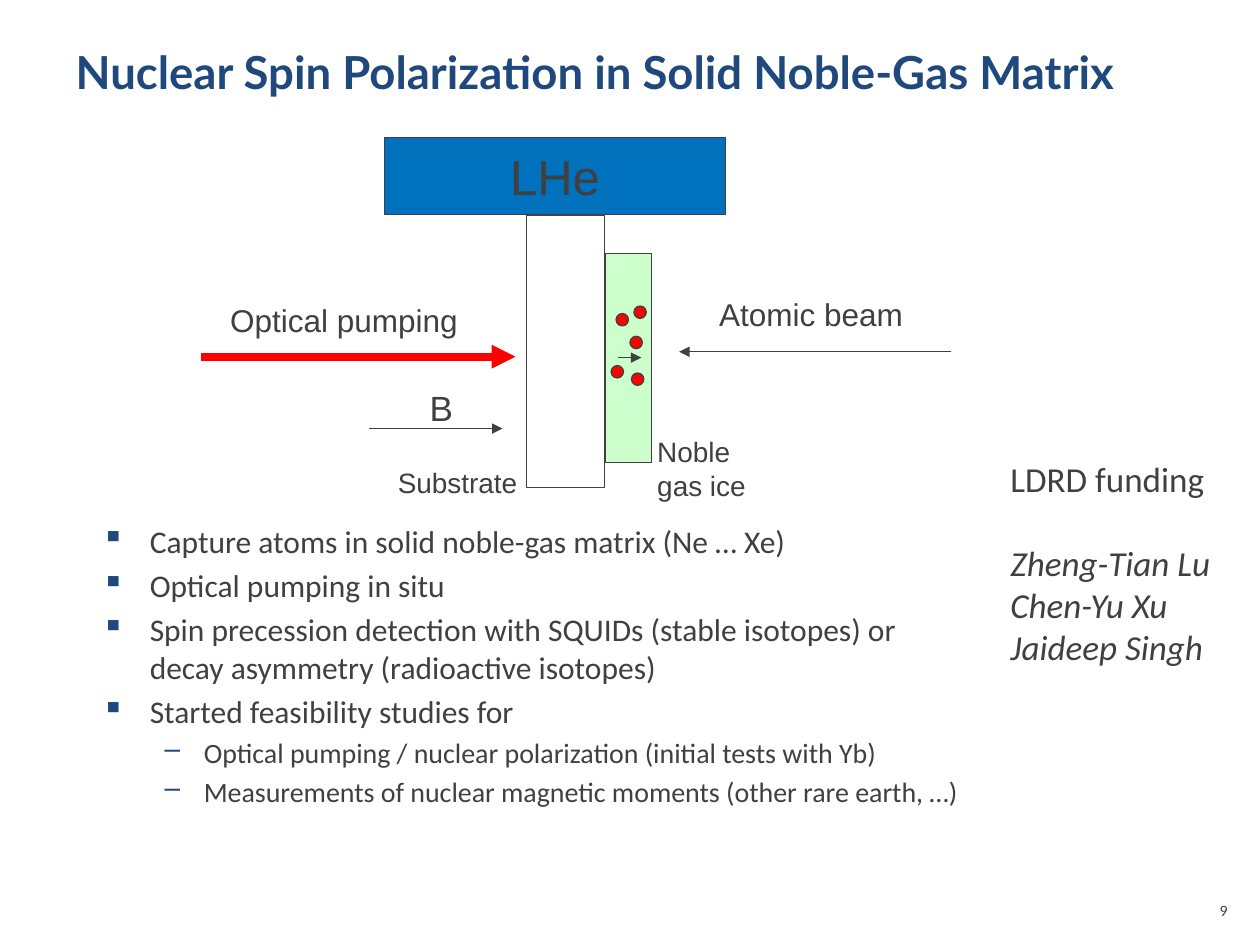
from dataclasses import dataclass, field

from lxml.etree import SubElement
from pptx import Presentation
from pptx.dml.color import RGBColor
from pptx.enum.shapes import MSO_CONNECTOR, MSO_SHAPE
from pptx.enum.text import MSO_ANCHOR, MSO_AUTO_SIZE, PP_ALIGN
from pptx.oxml.ns import qn
from pptx.util import Cm, Pt

COLORS = {
    "text": "404040",
    "navy": "1F497D",
    "helium": "0071BC",
    "ice": "CCFFCC",
    "white": "FFFFFF",
    "red": "FF0000",
}


@dataclass
class Block:
    box: tuple
    fill: str
    preset: MSO_SHAPE = MSO_SHAPE.RECTANGLE


@dataclass
class Arrow:
    start: float
    end: float
    y: float
    color: str = "text"
    width: float = 0.75


@dataclass
class Line:
    text: str
    style: dict = field(default_factory=dict)
    align: PP_ALIGN = PP_ALIGN.LEFT
    before: float = 0


@dataclass
class Label:
    box: tuple
    lines: list


@dataclass
class Bullet:
    char: str
    level: int
    indent: float
    hang: float
    style: dict


def look(size: float, name: str = "Arial", **extra) -> dict:
    return {"size": Pt(size), "name": name, **extra}


def rgb(color: str) -> RGBColor:
    return RGBColor.from_string(COLORS[color])


def lengths(box: tuple) -> list:
    return [Cm(value) for value in box]


def write(paragraph, line: Line, color: str = "text") -> None:
    paragraph.text = line.text
    paragraph.alignment = line.align
    paragraph.space_before = Pt(line.before)
    for font in (paragraph.font, *(run.font for run in paragraph.runs)):
        for attribute, value in line.style.items():
            setattr(font, attribute, value)
        font.color.rgb = rgb(color)


def add_block(slide, block: Block):
    shape = slide.shapes.add_shape(block.preset, *lengths(block.box))
    shape.shadow.inherit = False
    shape.fill.solid()
    shape.fill.fore_color.rgb = rgb(block.fill)
    shape.line.color.rgb = rgb("text")
    shape.line.width = Pt(0.75)
    return shape


def add_arrow(slide, arrow: Arrow) -> None:
    connector = slide.shapes.add_connector(
        MSO_CONNECTOR.STRAIGHT, *lengths((arrow.start, arrow.y, arrow.end, arrow.y))
    )
    connector.line.color.rgb = rgb(arrow.color)
    connector.line.width = Pt(arrow.width)
    SubElement(connector.line._get_or_add_ln(), qn("a:tailEnd"), type="triangle")
    SubElement(connector._element.spPr, qn("a:effectLst"))


def add_label(slide, label: Label) -> None:
    frame = slide.shapes.add_textbox(*lengths(label.box)).text_frame
    frame.word_wrap = False
    frame.auto_size = MSO_AUTO_SIZE.SHAPE_TO_FIT_TEXT
    for index, line in enumerate(label.lines):
        write(frame.add_paragraph() if index else frame.paragraphs[0], line)


def add_bullets(slide, box: tuple, items: list) -> None:
    frame = slide.shapes.add_textbox(*lengths(box)).text_frame
    frame.word_wrap = True
    for index, (bullet, text) in enumerate(items):
        paragraph = frame.add_paragraph() if index else frame.paragraphs[0]
        paragraph.level = bullet.level
        properties = paragraph._p.get_or_add_pPr()
        properties.set("marL", str(Cm(bullet.indent)))
        properties.set("indent", str(-Cm(bullet.hang)))
        tint = SubElement(properties, qn("a:buClr"))
        SubElement(tint, qn("a:srgbClr"), val=COLORS["navy"])
        SubElement(properties, qn("a:buChar"), char=bullet.char)
        before = bullet.style["size"].pt * 0.2 if index else 0
        write(paragraph, Line(text, bullet.style, before=before))


POINT = Bullet("▪", 0, 0.97, 0.97, look(18, "Calibri"))
DETAIL = Bullet("–", 1, 2.06, 0.79, look(16, "Calibri"))
GOALS = [
    (POINT, "Capture atoms in solid noble-gas matrix (Ne … Xe)"),
    (POINT, "Optical pumping in situ"),
    (POINT, "Spin precession detection with SQUIDs (stable isotopes) or\n"
            "decay asymmetry (radioactive isotopes)"),
    (POINT, "Started feasibility studies for"),
    (DETAIL, "Optical pumping / nuclear polarization (initial tests with Yb)"),
    (DETAIL, "Measurements of nuclear magnetic moments (other rare earth, …)"),
]

SUBSTRATE = Block((10.62, 4.34, 1.57, 5.49), "white")
ICE = Block((12.2, 5.11, 0.94, 4.22), "ice")
HELIUM = Block((7.75, 2.77, 6.88, 1.55), "helium")
ATOM_SIZE = 0.25
ATOMS = [(12.73, 7.52), (12.78, 6.17), (12.7, 6.78), (12.42, 6.32), (12.32, 7.37)]

ARROWS = [
    Arrow(12.45, 12.93, 7.21),
    Arrow(4.06, 10.39, 7.19, "red", 4.5),
    Arrow(19.18, 13.69, 7.09),
    Arrow(7.44, 10.13, 8.64),
]

FUNDING = look(20, "Calibri")
AUTHOR = look(20, "Calibri", italic=True)
LABELS = [
    Label((7.77, 9.27, 2.92, 0.94), [Line("Substrate", look(16))]),
    Label((13, 8.64, 2.29, 1.63), [Line("Noble\ngas ice", look(16))]),
    Label((4.39, 5.94, 5.11, 1.02), [Line("Optical pumping", look(18))]),
    Label((14.25, 5.82, 4.22, 1.02), [Line("Atomic beam", look(18))]),
    Label((8.41, 7.67, 0.99, 1.09), [Line("B", look(20))]),
    Label((20.12, 9.09, 4.57, 4.52), [
        Line("LDRD funding", FUNDING),
        Line("Zheng-Tian Lu", AUTHOR, before=24),
        Line("Chen-Yu Xu", AUTHOR),
        Line("Jaideep Singh", AUTHOR),
    ]),
    Label((23.93, 18.03, 1.07, 1.02), [Line("9", look(9, "Calibri"), PP_ALIGN.RIGHT)]),
]


def main() -> None:
    deck = Presentation()
    deck.slide_width, deck.slide_height = Cm(25.4), Cm(19.05)
    slide = deck.slides.add_slide(deck.slide_layouts[5])

    title = slide.shapes.title
    title.left, title.top, title.width, title.height = lengths((1.27, 0.76, 22.86, 3.18))
    title.text_frame.vertical_anchor = MSO_ANCHOR.TOP
    heading = Line("Nuclear Spin Polarization in Solid Noble-Gas Matrix", look(26, "Lato", bold=True))
    write(title.text_frame.paragraphs[0], heading, "navy")

    add_bullets(slide, (1.8, 10.39, 22.05, 7.26), GOALS)
    add_block(slide, SUBSTRATE)
    add_block(slide, ICE)
    helium = add_block(slide, HELIUM).text_frame
    helium.word_wrap = False
    helium.vertical_anchor = MSO_ANCHOR.MIDDLE
    write(helium.paragraphs[0], Line("LHe", look(28), PP_ALIGN.CENTER))

    for arrow in ARROWS:
        add_arrow(slide, arrow)
    for label in LABELS:
        add_label(slide, label)
    for atom in ATOMS:
        add_block(slide, Block((*atom, ATOM_SIZE, ATOM_SIZE), "red", MSO_SHAPE.OVAL))

    deck.save("out.pptx")


if __name__ == "__main__":
    main()
